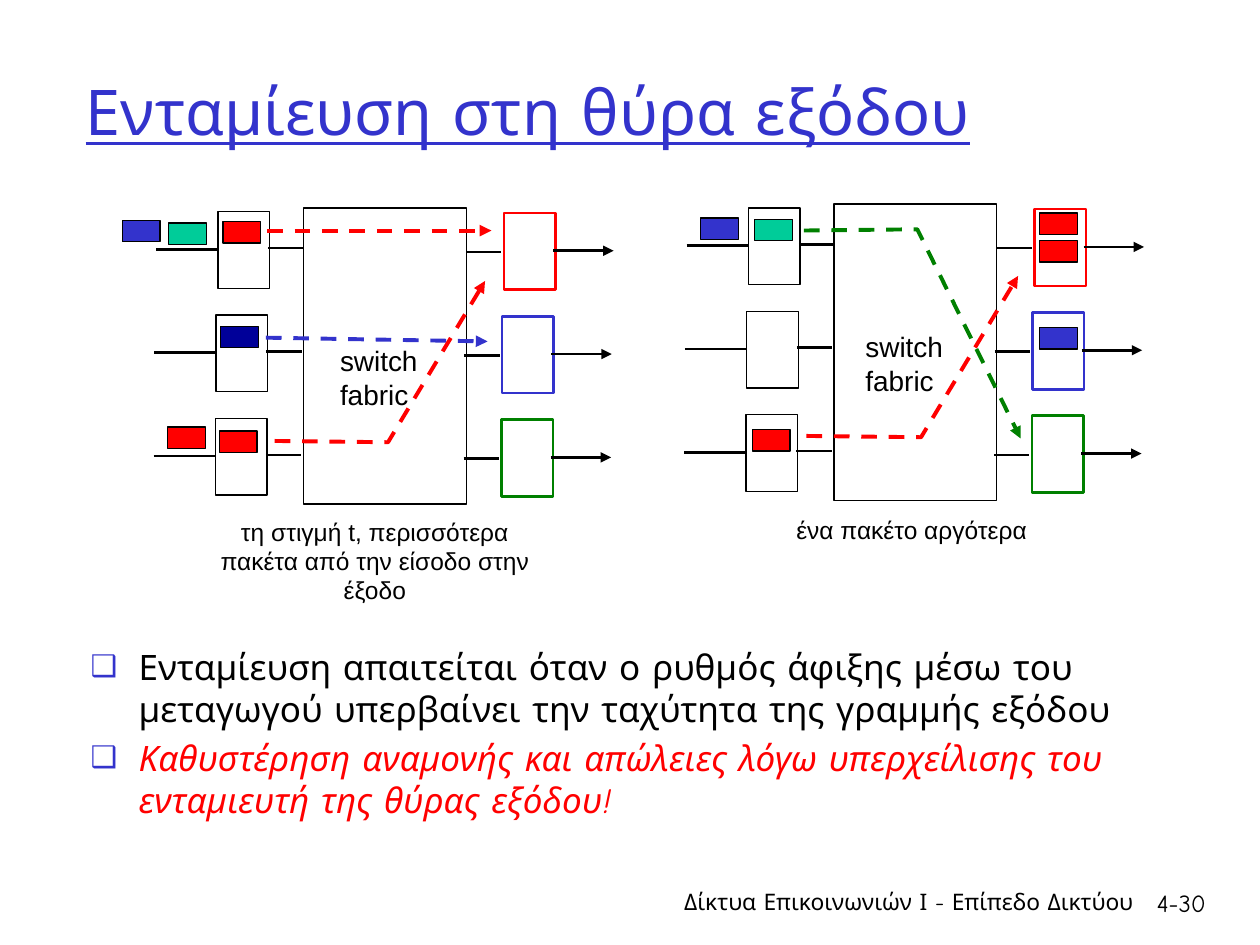
import pptx
import pptx.util
import pptx.dml.color
import pptx.enum.dml
import pptx.enum.shapes
import pptx.enum.text
import pptx.oxml.ns
import lxml.etree

Pt = pptx.util.Pt
RGBColor = pptx.dml.color.RGBColor
ALIGN = pptx.enum.text.PP_ALIGN
ANCHOR = pptx.enum.text.MSO_ANCHOR
qn = pptx.oxml.ns.qn
BLACK = RGBColor(0x00, 0x00, 0x00)
WHITE = RGBColor(0xFF, 0xFF, 0xFF)
RED = RGBColor(0xFF, 0x00, 0x00)
BLUE = RGBColor(0x33, 0x33, 0xCC)
NAVY = RGBColor(0x00, 0x00, 0x99)
GREEN = RGBColor(0x00, 0x80, 0x00)
TEAL = RGBColor(0x00, 0xCC, 0x99)
COMIC = "Comic Neue"

deck = pptx.Presentation()
deck.slide_width = pptx.util.Inches(10)
deck.slide_height = pptx.util.Inches(7.5)
COL = deck.slide_width / 100
ROW = deck.slide_height / 75
slide = deck.slides.add_slide(deck.slide_layouts[1])
shapes = slide.shapes


def write(shape, text, area, size, font=COMIC, color=BLACK, align=ALIGN.LEFT,
          anchor=ANCHOR.TOP, wrap=True, line=False):
    left, top, width, height = area
    shape.left, shape.top = round(left * COL), round(top * ROW)
    shape.width, shape.height = round(width * COL), round(height * ROW)
    frame = shape.text_frame
    frame.text = text
    frame.word_wrap = wrap
    frame.auto_size = pptx.enum.text.MSO_AUTO_SIZE.NONE
    frame.vertical_anchor = anchor
    for para in frame.paragraphs:
        para.alignment = align
        face = para.runs[0].font
        face.name, face.size, face.underline = font, Pt(size), line
        face.color.rgb = color
    return frame


def stroke(points, color=BLACK, width=1.5, dash=False, arrow=False):
    spots = [(round(x * COL), round(y * ROW)) for x, y in points]
    if len(spots) == 2:
        kind = pptx.enum.shapes.MSO_CONNECTOR.STRAIGHT
        shape = shapes.add_connector(kind, *spots[0], *spots[1])
    else:
        pen = shapes.build_freeform(*spots[0], scale=1.0)
        pen.add_line_segments(spots[1:], close=False)
        shape = pen.convert_to_shape()
        shape.fill.background()
    shape.line.color.rgb = color
    shape.line.width = Pt(width)
    if dash:
        shape.line.dash_style = pptx.enum.dml.MSO_LINE.DASH
    props = shape._element.spPr
    if arrow:
        lxml.etree.SubElement(props.find(qn("a:ln")), qn("a:tailEnd"), type="triangle")
    lxml.etree.SubElement(props, qn("a:effectLst"))


write(shapes.title, "Ενταμίευση στη θύρα εξόδου", (5.8, 2.5, 85, 12.5), 36,
      color=BLUE, anchor=ANCHOR.MIDDLE, line=True)

body = write(slide.placeholders[1],
             "Ενταμίευση απαιτείται όταν ο ρυθμός άφιξης μέσω του μεταγωγού "
             "υπερβαίνει την ταχύτητα της γραμμής εξόδου\n"
             "Καθυστέρηση αναμονής και απώλειες λόγω υπερχείλισης του "
             "ενταμιευτή της θύρας εξόδου!", (6.2, 50.7, 85, 13), 20)
for para in body.paragraphs:
    para.space_before = Pt(4)
    props = para._p.get_or_add_pPr()
    props.set("marL", str(round(3.8 * COL)))
    props.set("indent", str(round(-3.8 * COL)))
    tint = lxml.etree.SubElement(props, qn("a:buClr"))
    lxml.etree.SubElement(tint, qn("a:srgbClr"), val=str(BLUE))
    lxml.etree.SubElement(props, qn("a:buSzPct"), val="85000")
    lxml.etree.SubElement(props, qn("a:buChar"), char="❑")
loss = body.paragraphs[1].runs[0].font
loss.italic = True
loss.color.rgb = RED

boxes = []
wires = []
for x, y in ((0, 0), (42.1, -0.3)):
    boxes.append((24.1 + x, 16.5 + y, 12.9, 23.5, WHITE, BLACK, 0.75))
    for row, edge in enumerate((RED, BLUE, GREEN)):
        left = x - (0, 0.15, 0.2)[row]
        top = y + 8.2 * row
        boxes.append((17.3 + left, 16.8 + top, 4.1, 6.1, WHITE, BLACK, 0.75))
        boxes.append((40 + left, 16.9 + top, 4.1, 6.1, WHITE, edge, 1.5))
        for start, end, level in ((12.4, 17.3, 19.8), (21.3, 24.1, 19.7),
                                  (37, 39.8, 20), (43.9, 48.7, 19.9)):
            wires.append((((start + left, level + top), (end + left, level + top)),
                          start > 40))

packets = (
    (17.7, 17.6, RED), (17.5, 25.9, NAVY), (17.4, 34.2, RED),
    (13.4, 17.7, TEAL), (13.3, 33.9, RED), (9.7, 17.5, BLUE),
    (82.5, 16.9, RED), (82.5, 26, BLUE), (82.5, 19.1, RED),
    (59.9, 17.4, TEAL), (59.7, 34.1, RED), (55.6, 17.3, BLUE))
for left, top, fill in packets:
    boxes.append((left, top, 3, 1.7, fill, BLACK, 0.75))

for left, top, width, height, fill, edge, weight in boxes:
    box = shapes.add_shape(pptx.enum.shapes.MSO_SHAPE.RECTANGLE,
                           round(left * COL), round(top * ROW),
                           round(width * COL), round(height * ROW))
    box.shadow.inherit = False
    box.fill.solid()
    box.fill.fore_color.rgb = fill
    box.line.color.rgb = edge
    box.line.width = Pt(weight)

for points, arrow in wires:
    stroke(points, arrow=arrow)

for color, points in (
        (RED, ((21.2, 18.3), (39, 18.3))),
        (BLUE, ((21.1, 26.8), (38.7, 27.1))),
        (RED, ((21.8, 35), (30.8, 35.1), (38.5, 22.3))),
        (RED, ((64, 34.6), (73.1, 34.7), (80.8, 21.9))),
        (GREEN, ((63.8, 18.3), (72.8, 18.2), (81, 34.8)))):
    stroke(points, color=color, width=2.25, dash=True, arrow=True)

for left, top in ((26, 26.8), (67.7, 25.7)):
    write(shapes.add_textbox(0, 0, 0, 0), "switch\nfabric", (left, top, 8.2, 6.4),
          16, font="Arial", wrap=False)

for text, area in (
        ("τη στιγμή t, περισσότερα πακέτα από την είσοδο στην έξοδο",
         (16.3, 40.5, 26.9, 8.1)),
        ("ένα πακέτο αργότερα", (58.9, 40.4, 26.9, 3.4))):
    write(shapes.add_textbox(0, 0, 0, 0), text, area, 14, font="Arial",
          align=ALIGN.CENTER)

for text, area, size in (
        ("Δίκτυα Επικοινωνιών Ι - Επίπεδο Δικτύου", (52.8, 70, 38.1, 5), 13),
        ("4-30", (89.3, 70, 7.4, 5), 14)):
    write(shapes.add_textbox(0, 0, 0, 0), text, area, size, align=ALIGN.RIGHT)

deck.save("out.pptx")
